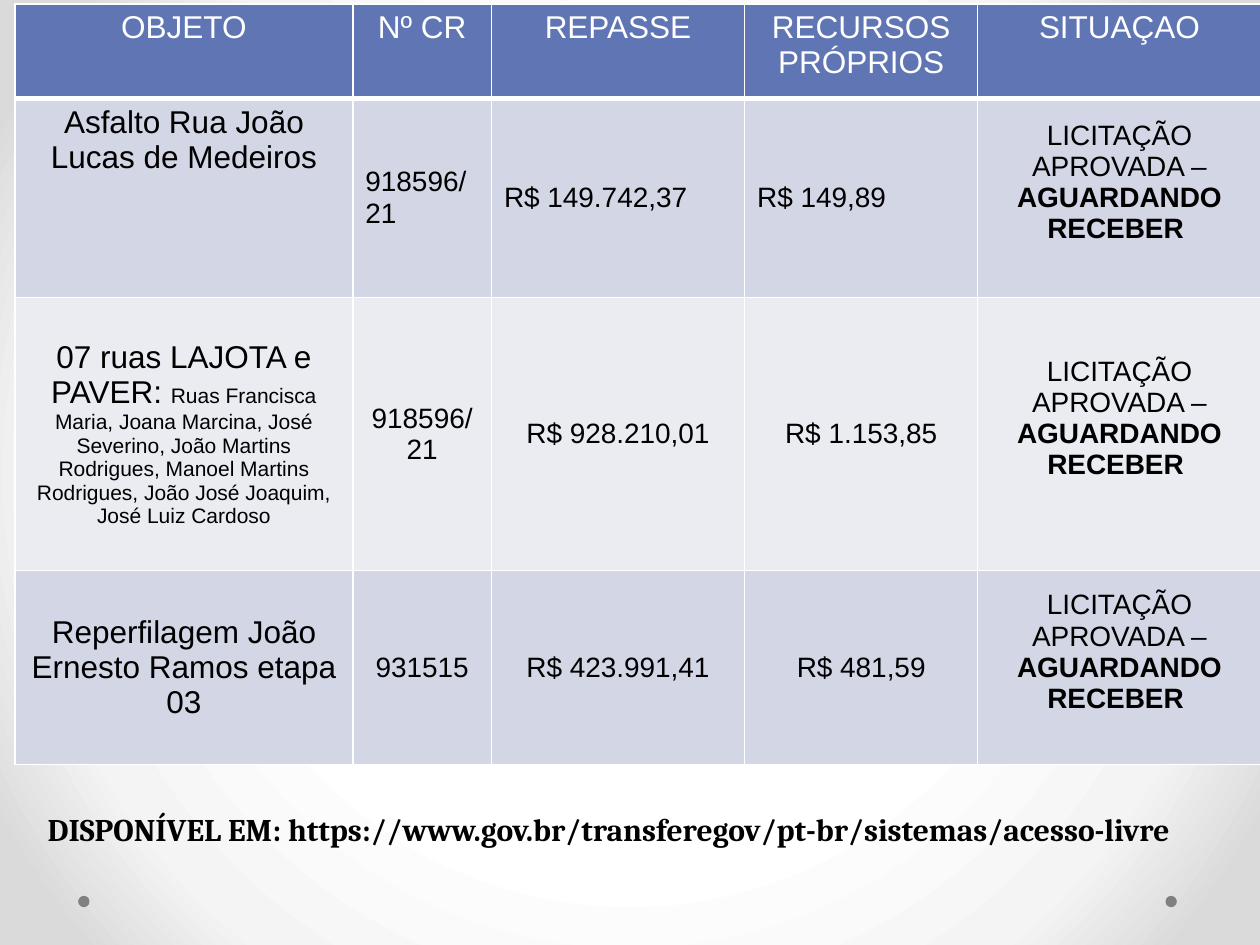
from lxml import etree
from pptx import Presentation
from pptx.dml.color import RGBColor
from pptx.enum.shapes import MSO_SHAPE
from pptx.enum.text import MSO_ANCHOR, PP_ALIGN
from pptx.oxml import parse_xml
from pptx.oxml.ns import nsdecls, qn
from pptx.util import Inches, Pt

TOP, MIDDLE = MSO_ANCHOR.TOP, MSO_ANCHOR.MIDDLE
LEFT, CENTER = PP_ALIGN.LEFT, PP_ALIGN.CENTER
OVAL = MSO_SHAPE.OVAL

COLORS = {
    "white": "FFFFFF",
    "pale": "F4F4F4",
    "silver": "DADADA",
    "dot": "808080",
    "header": "6076B4",
    "odd": "D2D6E5",
    "even": "EAECF2",
    "ink": "000000",
}

deck = Presentation()
deck.slide_width, deck.slide_height = Inches(10), Inches(7.5)
page = deck.slides.add_slide(deck.slide_layouts[6])


def share(x, y, w, h):
    across, down = deck.slide_width / 100, deck.slide_height / 100
    return int(x * across), int(y * down), int(w * across), int(h * down)


def add_span(para, text, size, color="ink", bold=False, name="Arial"):
    span = para.add_run()
    span.text = text
    for key, value in {"size": Pt(size), "bold": bold, "name": name}.items():
        setattr(span.font, key, value)
    span.font.color.rgb = RGBColor.from_string(COLORS[color])


page.background.fill.gradient()
gradient = page.element.find(".//" + qn("a:gradFill"))
stops = "".join(
    f'<a:gs pos="{place}000"><a:srgbClr val="{COLORS[color]}"/></a:gs>'
    for place, color in [(50, "white"), (76, "pale"), (92, "silver")]
)
gradient.getparent().replace(gradient, parse_xml(
    f'<a:gradFill {nsdecls("a")} rotWithShape="1"><a:gsLst>{stops}</a:gsLst>'
    '<a:path path="circle"><a:fillToRect l="50000" t="50000" r="50000" b="50000"/>'
    "</a:path></a:gradFill>"
))

for x in (6.2, 92.5):
    dot = page.shapes.add_shape(OVAL, *share(x, 94.8, 0.9, 1.2))
    dot.shadow.inherit = False
    dot.fill.solid()
    dot.fill.fore_color.rgb = RGBColor.from_string(COLORS["dot"])
    dot.line.fill.background()

titles = ["OBJETO", "Nº CR", "REPASSE", "RECURSOS PRÓPRIOS", "SITUAÇAO"]
streets = (
    "Ruas Francisca Maria, Joana Marcina, José Severino, João Martins Rodrigues, "
    "Manoel Martins Rodrigues, João José Joaquim, José Luiz Cardoso"
)
status = [("LICITAÇÃO APROVADA – ", 16), ("AGUARDANDO RECEBER ", 16, "ink", True)]
projects = [
    ([("Asfalto Rua João Lucas de Medeiros", 18)],
     "918596/21", "R$ 149.742,37", "R$ 149,89"),
    ([("07 ruas LAJOTA e PAVER: ", 18), (streets, 12)],
     "918596/21", "R$ 928.210,01", "R$ 1.153,85"),
    ([("Reperfilagem João Ernesto Ramos etapa 03", 18)],
     "931515", "R$ 423.991,41", "R$ 481,59"),
]
rows = [[[(title, 18, "white")] for title in titles]]
for work, *values in projects:
    rows.append([work, *([(value, 16)] for value in values), status])

widths = [26.8, 11, 20.1, 18.5, 22.5]
heights = [10, 21.07, 28.93, 20.53]
table = page.shapes.add_table(
    len(rows), len(titles), *share(1.2, 0.4, sum(widths), sum(heights))
).table
for column, width in zip(table.columns, widths):
    column.width = share(0, 0, width, 0)[2]
for line, height in zip(table.rows, heights):
    line.height = share(0, 0, 0, height)[3]

for r, row in enumerate(rows):
    for c, spans in enumerate(row):
        cell = table.cell(r, c)
        cell.vertical_anchor = TOP if r == 0 or (r, c) == (1, 0) else MIDDLE
        if r and c == len(titles) - 1:
            cell.margin_bottom = Inches(0.3)
        para = cell.text_frame.paragraphs[0]
        para.alignment = LEFT if r == 1 and c in (1, 2, 3) else CENTER
        for span in spans:
            add_span(para, *span)
        properties = cell._tc.get_or_add_tcPr()
        for side in "LRTB":
            thick = (r, side) in [(0, "B"), (1, "T")]
            edge = etree.SubElement(properties, qn(f"a:ln{side}"), w=str(Pt(3 if thick else 1)))
            paint = etree.SubElement(edge, qn("a:solidFill"))
            etree.SubElement(paint, qn("a:srgbClr"), val=COLORS["white"])
        cell.fill.solid()
        band = "header" if r == 0 else "odd" if r % 2 else "even"
        cell.fill.fore_color.rgb = RGBColor.from_string(COLORS[band])

box = page.shapes.add_textbox(*share(2.8, 85.07, 92.9, 5.33))
box.text_frame.word_wrap = True
add_span(
    box.text_frame.paragraphs[0],
    "DISPONÍVEL EM: https://www.gov.br/transferegov/pt-br/sistemas/acesso-livre",
    18, bold=True, name="Cambria",
)

deck.save("out.pptx")
